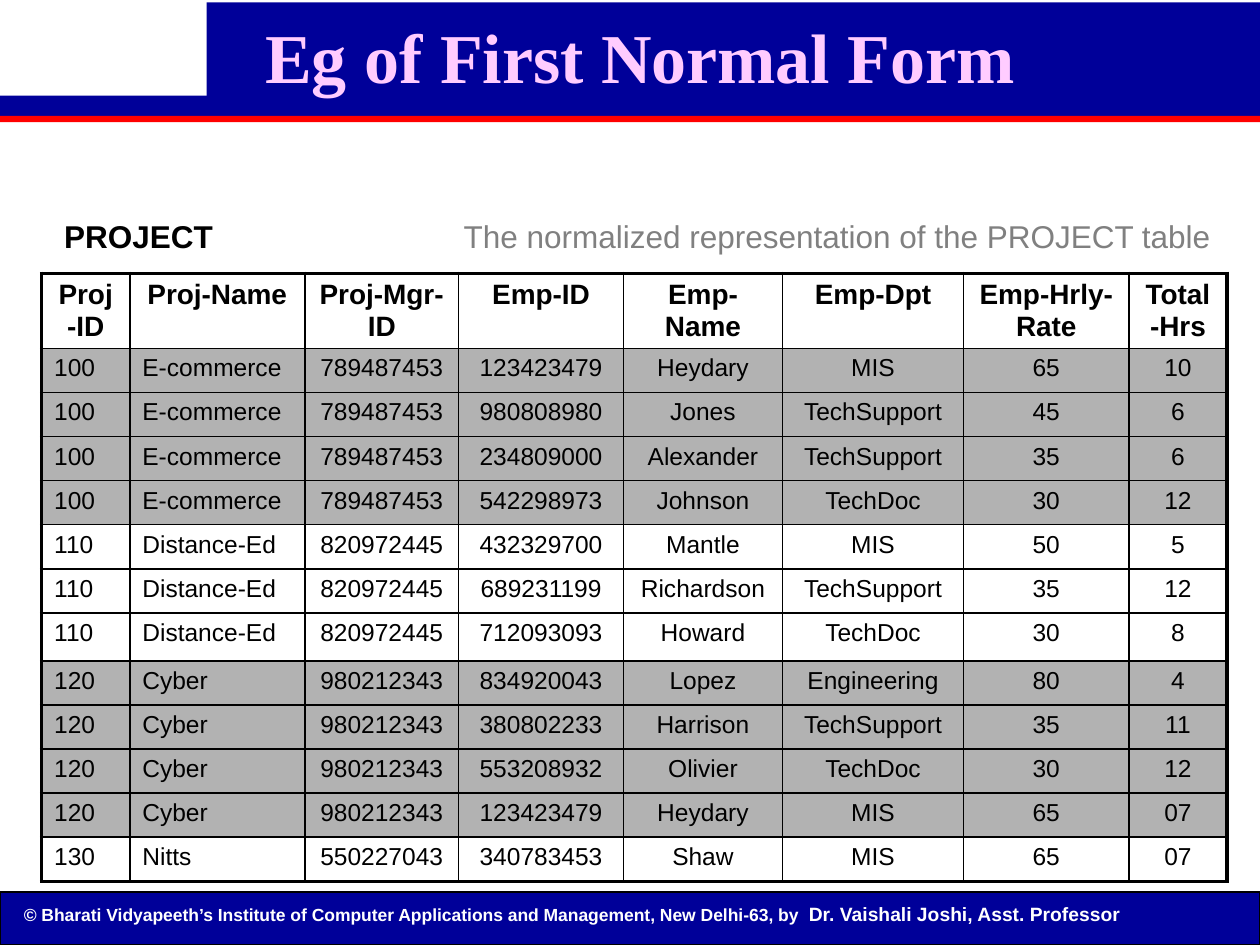
"""Build the First Normal Form slide with its PROJECT table."""
import dataclasses
import typing

import pptx
import pptx.dml.color
import pptx.enum.shapes
import pptx.enum.text
import pptx.oxml
import pptx.oxml.ns
import pptx.util

Inches = pptx.util.Inches
Pt = pptx.util.Pt
ALIGN = pptx.enum.text.PP_ALIGN

HUES = {
    "navy": "000099", "red": "FF0000", "black": "000000", "white": "FFFFFF",
    "pink": "FFCCFF", "gray": "808080", "shade": "B2B2B2",
}


@dataclasses.dataclass
class Bar:
    left: float
    top: float
    width: float
    height: float
    hue: str
    edge: bool = False


@dataclasses.dataclass
class Label:
    left: float
    top: float
    width: float
    height: float
    texts: tuple[tuple[str, float], ...]
    hue: str
    bold: bool = True
    align: ALIGN = ALIGN.CENTER
    wrap: bool = False


class Project(typing.NamedTuple):
    code: str
    name: str
    boss: str
    shade: bool
    staff: tuple[tuple[str, ...], ...]


BARS = (
    Bar(0, 0.76, 10, 0.16, "navy"),
    Bar(0, 0.92, 10, 0.05, "red"),
    Bar(1.64, 0.02, 8.36, 0.76, "navy"),
    Bar(0, 7.08, 10, 0.42, "navy", edge=True),
)
LABELS = (
    Label(0.09, 7.11, 9.58, 0.29, (
        ("© Bharati Vidyapeeth’s Institute of Computer Applications and "
         "Management, New Delhi-63, by", 10),
        ("  Dr. Vaishali Joshi, Asst. Professor", 11),
    ), "white", align=ALIGN.LEFT, wrap=True),
    Label(0.41, 1.67, 1.38, 0.4, (("PROJECT", 18),), "black"),
    Label(3.58, 1.67, 6.13, 0.4,
          (("The normalized representation of the PROJECT table", 18),),
          "gray", bold=False),
)
HEADS = ("Proj-ID", "Proj-Name", "Proj-Mgr-ID", "Emp-ID", "Emp-Name",
         "Emp-Dpt", "Emp-Hrly-Rate", "Total-Hrs")
WIDTHS = (0.7, 1.39, 1.22, 1.31, 1.26, 1.44, 1.31, 0.78)
HEIGHTS = (0.58,) + (0.35,) * 6 + (0.38,) + (0.35,) * 5
PROJECTS = (
    Project("100", "E-commerce", "789487453", True, (
        ("123423479", "Heydary", "MIS", "65", "10"),
        ("980808980", "Jones", "TechSupport", "45", "6"),
        ("234809000", "Alexander", "TechSupport", "35", "6"),
        ("542298973", "Johnson", "TechDoc", "30", "12"),
    )),
    Project("110", "Distance-Ed", "820972445", False, (
        ("432329700", "Mantle", "MIS", "50", "5"),
        ("689231199", "Richardson", "TechSupport", "35", "12"),
        ("712093093", "Howard", "TechDoc", "30", "8"),
    )),
    Project("120", "Cyber", "980212343", True, (
        ("834920043", "Lopez", "Engineering", "80", "4"),
        ("380802233", "Harrison", "TechSupport", "35", "11"),
        ("553208932", "Olivier", "TechDoc", "30", "12"),
        ("123423479", "Heydary", "MIS", "65", "07"),
    )),
    Project("130", "Nitts", "550227043", False, (
        ("340783453", "Shaw", "MIS", "65", "07"),
    )),
)


def tint(hue: str) -> pptx.dml.color.RGBColor:
    return pptx.dml.color.RGBColor.from_string(HUES[hue])


def style(font, size: float, hue: str, bold: bool, face: str = "Arial") -> None:
    font.name, font.size, font.bold = face, Pt(size), bold
    font.color.rgb = tint(hue)


def draw_bar(slide, bar: Bar) -> None:
    shape = slide.shapes.add_shape(
        pptx.enum.shapes.MSO_SHAPE.RECTANGLE,
        *map(Inches, (bar.left, bar.top, bar.width, bar.height)))
    shape.shadow.inherit = False
    shape.fill.solid()
    shape.fill.fore_color.rgb = tint(bar.hue)
    if bar.edge:
        shape.line.color.rgb = tint("black")
        shape.line.width = Pt(0.75)
    else:
        shape.line.fill.background()


def draw_label(slide, label: Label) -> None:
    box = slide.shapes.add_textbox(
        *map(Inches, (label.left, label.top, label.width, label.height)))
    box.text_frame.word_wrap = label.wrap
    para = box.text_frame.paragraphs[0]
    para.alignment = label.align
    for text, size in label.texts:
        run = para.add_run()
        run.text = text
        style(run.font, size, label.hue, label.bold)


def draw_title(slide, text: str) -> None:
    title = slide.shapes.title
    title.element.getparent().append(title.element)
    title.left, title.top, title.width, title.height = map(
        Inches, (0.58, 0, 9, 1))
    frame = title.text_frame
    frame.text = text
    frame.vertical_anchor = pptx.enum.text.MSO_ANCHOR.TOP
    frame.margin_top = Inches(0.11)
    para = frame.paragraphs[0]
    para.alignment = ALIGN.CENTER
    style(para.runs[0].font, 40, "pink", True, "Times New Roman")


def set_edge(cell, side: str, outer: bool) -> None:
    width = Pt(2.25 if outer else 1)
    cell._tc.get_or_add_tcPr().append(pptx.oxml.parse_xml(
        f'<a:ln{side} {pptx.oxml.ns.nsdecls("a")} w="{width}"><a:solidFill>'
        f'<a:srgbClr val="{HUES["black"]}"/></a:solidFill></a:ln{side}>'))


def draw_table(slide) -> None:
    rows = [(HEADS, False)] + [
        ((proj.code, proj.name, proj.boss) + staff, proj.shade)
        for proj in PROJECTS for staff in proj.staff]
    table = slide.shapes.add_table(
        len(rows), len(HEADS), Inches(0.33), Inches(2.17),
        Inches(sum(WIDTHS)), Inches(sum(HEIGHTS))).table
    table.first_row = table.horz_banding = False
    for col, width in zip(table.columns, WIDTHS):
        col.width = Inches(width)
    for row, height in zip(table.rows, HEIGHTS):
        row.height = Inches(height)
    for r, (texts, shade) in enumerate(rows):
        for c, text in enumerate(texts):
            cell = table.cell(r, c)
            set_edge(cell, "L", c == 0)
            set_edge(cell, "R", c == len(HEADS) - 1)
            set_edge(cell, "T", r == 0)
            set_edge(cell, "B", r == len(rows) - 1)
            if shade:
                cell.fill.solid()
                cell.fill.fore_color.rgb = tint("shade")
            else:
                cell.fill.background()
            cell.text_frame.text = text
            para = cell.text_frame.paragraphs[0]
            para.alignment = ALIGN.LEFT if r and c < 2 else ALIGN.CENTER
            style(para.runs[0].font, 14 if r else 16, "black", r == 0)


def main() -> None:
    deck = pptx.Presentation()
    deck.slide_width, deck.slide_height = Inches(10), Inches(7.5)
    slide = deck.slides.add_slide(deck.slide_layouts[5])
    for bar in BARS:
        draw_bar(slide, bar)
    draw_title(slide, "Eg of First Normal Form")
    draw_table(slide)
    for label in LABELS:
        draw_label(slide, label)
    deck.save("out.pptx")


if __name__ == "__main__":
    main()
